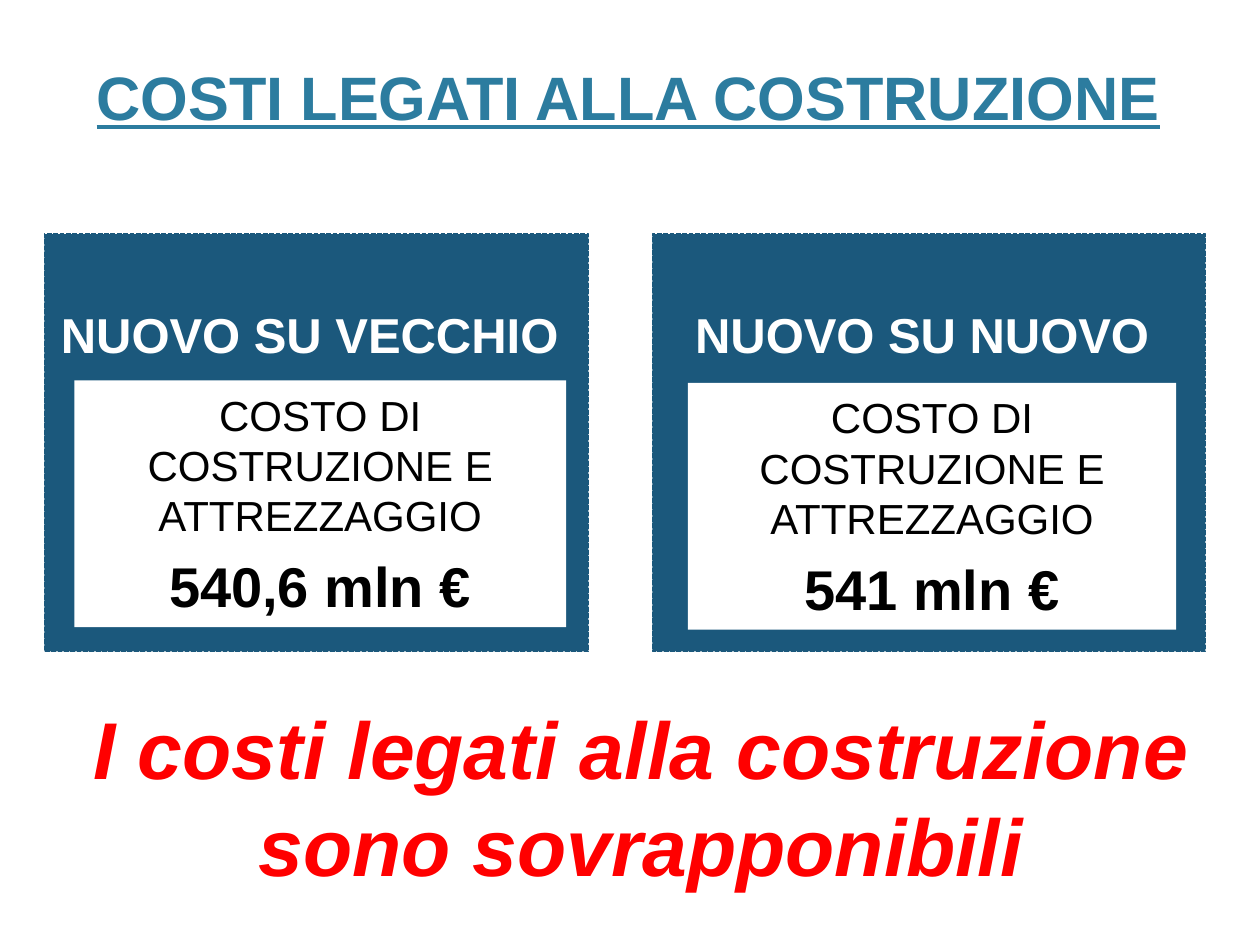
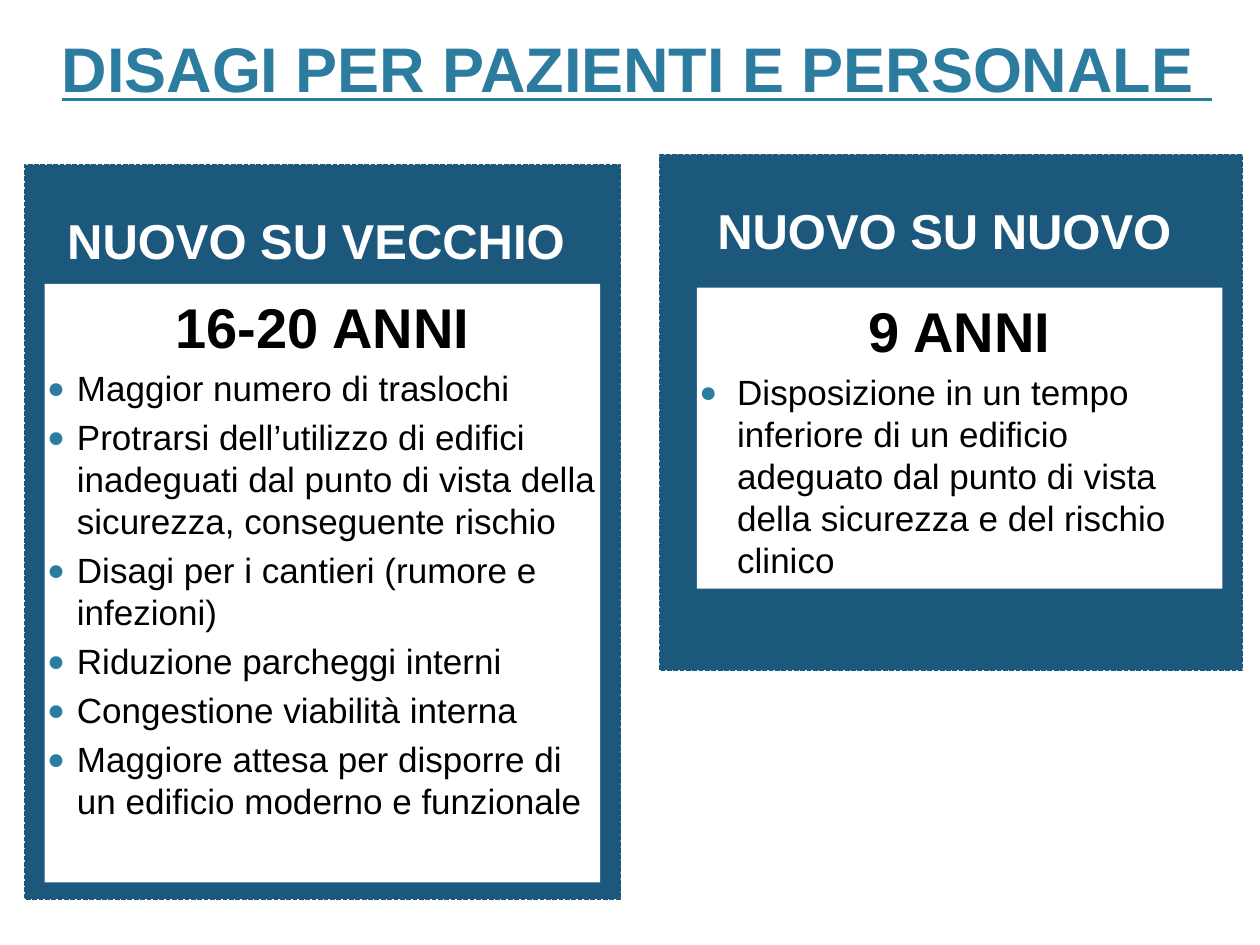
import pptx
import pptx.util
import pptx.dml.color
import pptx.enum.dml
import pptx.enum.shapes
import pptx.enum.text
from lxml import etree

Pt = pptx.util.Pt
ALIGN = pptx.enum.text.PP_ALIGN
ANCHOR = pptx.enum.text.MSO_ANCHOR
NAVY, TEAL, RED = "1B587C", "2C7C9F", "FF0000"
WHITE, BLACK = "FFFFFF", "000000"
FONT = "Arial"
NS = "http://schemas.openxmlformats.org/drawingml/2006/main"


def paint(target, color):
    target.rgb = pptx.dml.color.RGBColor.from_string(color)


def fill(shape, color):
    shape.fill.solid()
    paint(shape.fill.fore_color, color)


def place(shape, box):
    shape.left, shape.top, shape.width, shape.height = map(Pt, box)


def style(para, size, color, bold=False, italic=False, under=False):
    for run in para.runs:
        font = run.font
        font.name, font.size = FONT, Pt(size)
        font.bold, font.italic, font.underline = bold, italic, under
        paint(font.color, color)


def mark(para, indent):
    """Give the paragraph a round bullet with a hanging indent, or none at 0."""
    props = para._p.get_or_add_pPr()
    props.set("marL", str(Pt(indent)))
    props.set("indent", str(-Pt(indent)))

    def add(parent, tag, **attrs):
        return etree.SubElement(parent, f"{{{NS}}}{tag}", **attrs)

    if indent:
        add(add(props, "buClr"), "srgbClr", val=TEAL)
        add(props, "buSzPct", val="85000")
        add(props, "buFont", typeface=FONT)
        add(props, "buChar", char="●")
    else:
        add(props, "buNone")


def head(slide, box, text, size, pitch=1.0):
    title = slide.shapes.title
    place(title, box)
    frame = title.text_frame
    frame.text = text
    frame.auto_size = pptx.enum.text.MSO_AUTO_SIZE.NONE
    frame.vertical_anchor = ANCHOR.BOTTOM
    para = frame.paragraphs[0]
    para.alignment, para.line_spacing = ALIGN.CENTER, pitch
    style(para, size, TEAL, bold=True, under=True)


def panel(slide, box, label, drop):
    """Draw a blue panel whose label starts drop points below its top."""
    shape = slide.shapes.add_shape(
        pptx.enum.shapes.MSO_SHAPE.RECTANGLE, *map(Pt, box))
    shape.shadow.inherit = False
    fill(shape, NAVY)
    paint(shape.line.color, NAVY)
    shape.line.width = Pt(0.9)
    shape.line.dash_style = pptx.enum.dml.MSO_LINE.SQUARE_DOT
    frame = shape.text_frame
    frame.text = label
    frame.vertical_anchor = ANCHOR.TOP
    frame.margin_top = Pt(drop)
    frame.paragraphs[0].alignment = ALIGN.CENTER
    style(frame.paragraphs[0], 28, WHITE, bold=True)


def card(slide, body, box, rows):
    """Fill a white body; rows hold text, size, bold and bullet indent."""
    slide.shapes.element.append(body.element)
    place(body, box)
    fill(body, WHITE)
    frame = body.text_frame
    frame.text = "\n".join(row[0] for row in rows)
    frame.auto_size = pptx.enum.text.MSO_AUTO_SIZE.NONE
    frame.vertical_anchor = ANCHOR.TOP
    frame.margin_left = frame.margin_right = Pt(1.44)
    frame.margin_top = Pt(5)
    for pos, (para, row) in enumerate(zip(frame.paragraphs, rows)):
        _, size, bold, indent = row
        para.alignment = ALIGN.LEFT if indent else ALIGN.CENTER
        para.space_before = Pt(size * 0.2 if pos else 0)
        mark(para, indent)
        style(para, size, BLACK, bold)


def columns(slide, drop, parts):
    """Build the two compared options, each a panel with a card on it."""
    bodies = list(slide.placeholders)[1:3]
    labels = "NUOVO SU VECCHIO ", "NUOVO SU NUOVO "
    for body, label, (outer, inner, rows) in zip(bodies, labels, parts):
        panel(slide, outer, label, drop)
        left, top, width, height = inner
        card(slide, body, (outer[0] + left, outer[1] + top, width, height), rows)


def claim(slide, box, text):
    shape = slide.shapes.add_textbox(*map(Pt, box))
    frame = shape.text_frame
    frame.word_wrap = True
    frame.vertical_anchor = ANCHOR.BOTTOM
    frame.text = text
    frame.paragraphs[0].alignment = ALIGN.CENTER
    style(frame.paragraphs[0], 46, RED, bold=True, italic=True)


def costs(slide):
    def rows(price):
        return [("COSTO DI COSTRUZIONE E ATTREZZAGGIO", 24, False, 0),
                (price, 32, True, 0)]

    head(slide, (42.5, 20, 633.5, 60), "COSTI LEGATI ALLA COSTRUZIONE", 35, 0.9)
    columns(slide, 40, [
        ((25.3, 133.8, 311, 238.5), (17.2, 83.6, 281, 141), rows("540,6 mln €")),
        ((372.8, 133.8, 316, 238.5), (20.3, 85, 279, 141), rows("541 mln €")),
    ])
    claim(slide, (4.3, 408, 723.6, 105.4),
          "I costi legati alla costruzione sono sovrapponibili")


def hardship(slide):
    def rows(years, indent, *points):
        return [(years, 32, True, 0)] + [
            (point, 20, False, indent) for point in points]

    head(slide, (25.2, 3.6, 677.5, 60), "DISAGI PER PAZIENTI E PERSONALE ", 36)
    columns(slide, 26, [
        ((14.2, 94.2, 340.5, 419.5), (11.3, 68, 317.5, 342), rows(
            "16-20 ANNI", 17,
            "Maggior numero di traslochi",
            "Protrarsi dell’utilizzo di edifici inadeguati dal punto di vista "
            "della sicurezza, conseguente rischio",
            "Disagi per i cantieri (rumore e infezioni)",
            "Riduzione parcheggi interni",
            "Congestione viabilità interna",
            "Maggiore attesa per disporre di un edificio moderno e funzionale")),
        ((377, 88.4, 333, 294.6), (21.2, 76, 300.3, 172), rows(
            "9 ANNI", 21.6,
            "Disposizione in un tempo inferiore di un edificio adeguato dal "
            "punto di vista della sicurezza e del rischio clinico")),
    ])


def main():
    deck = pptx.Presentation()
    deck.slide_width, deck.slide_height = Pt(720), Pt(540)
    layout = deck.slide_layouts.get_by_name("Two Content")
    for build in (costs, hardship):
        build(deck.slides.add_slide(layout))
    deck.save("out.pptx")


if __name__ == "__main__":
    main()
